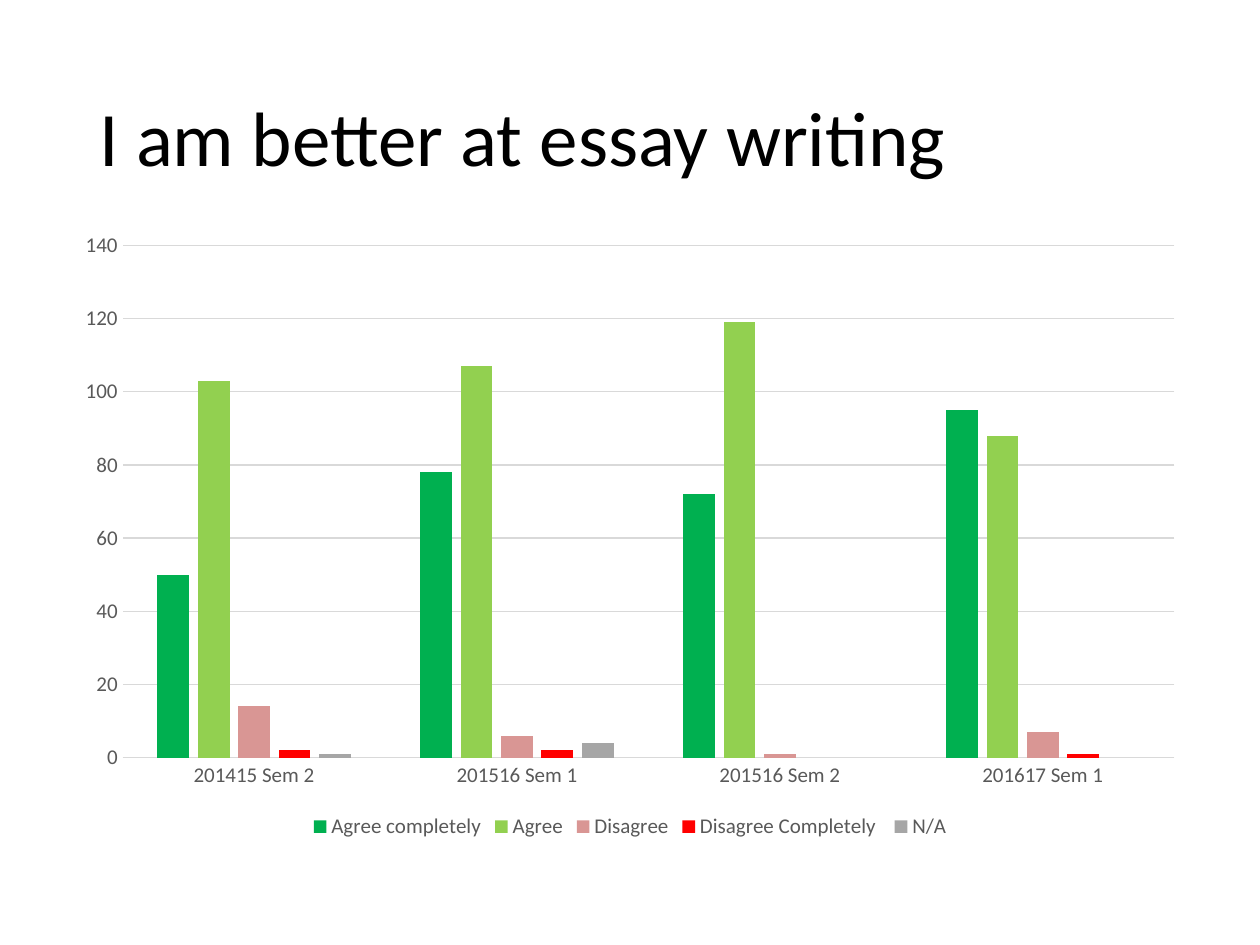
"""Build a slide with a clustered column chart of essay writing survey answers."""
from pptx import Presentation
from pptx.chart.data import CategoryChartData
from pptx.dml.color import RGBColor
from pptx.enum.chart import XL_CHART_TYPE, XL_LEGEND_POSITION, XL_TICK_MARK
from pptx.enum.text import MSO_ANCHOR
from pptx.util import Inches, Pt

FONT = "Calibri"
LABEL_GREY = "595959"
LINE_GREY = "D9D9D9"


def rgb(value):
    return RGBColor.from_string(value)


def add_text(slide, text, left, top, width, height, size, color):
    frame = slide.shapes.add_textbox(
        Inches(left), Inches(top), Inches(width), Inches(height)).text_frame
    frame.word_wrap = True
    frame.vertical_anchor = MSO_ANCHOR.MIDDLE
    paragraph = frame.paragraphs[0]
    paragraph.line_spacing = 0.9
    run = paragraph.add_run()
    run.text = text
    run.font.name = FONT
    run.font.size = Pt(size)
    run.font.color.rgb = rgb(color)


presentation = Presentation()
presentation.slide_width = Inches(10)
presentation.slide_height = Inches(7.5)
slide = presentation.slides.add_slide(presentation.slide_layouts[6])

add_text(slide, "I am better at essay writing", left=0.69, top=0.4,
         width=8.62, height=1.45, size=44, color="000000")

semesters = ["201415 Sem 2", "201516 Sem 1", "201516 Sem 2", "201617 Sem 1"]
answers = [
    ("Agree completely", [50, 78, 72, 95], "00B050"),
    ("Agree", [103, 107, 119, 88], "92D050"),
    ("Disagree", [14, 6, 1, 7], "D99694"),
    ("Disagree Completely ", [2, 2, None, 1], "FF0000"),
    ("N/A", [1, 4, None, None], "A6A6A6"),
]
survey = CategoryChartData()
survey.categories = semesters
for answer, counts, color in answers:
    survey.add_series(answer, counts)

chart = slide.shapes.add_chart(
    XL_CHART_TYPE.COLUMN_CLUSTERED, Inches(0.5), Inches(1.75),
    Inches(9), Inches(4.95), survey).chart
chart.has_title = False
chart.font.name = FONT
chart.font.size = Pt(10)
chart.font.color.rgb = rgb("000000")

columns = chart.plots[0]
columns.gap_width = 219
columns.overlap = -27
columns.vary_by_categories = False
for series, (answer, counts, color) in zip(columns.series, answers):
    series.invert_if_negative = False
    series.format.fill.solid()
    series.format.fill.fore_color.rgb = rgb(color)

chart.has_legend = True
chart.legend.position = XL_LEGEND_POSITION.BOTTOM
chart.legend.include_in_layout = False

semester_axis, count_axis = chart.category_axis, chart.value_axis
for axis in (semester_axis, count_axis):
    axis.major_tick_mark = XL_TICK_MARK.NONE
    axis.minor_tick_mark = XL_TICK_MARK.NONE
for font in (semester_axis.tick_labels.font, count_axis.tick_labels.font,
             chart.legend.font):
    font.name = FONT
    font.size = Pt(12)
    font.color.rgb = rgb(LABEL_GREY)

count_axis.has_major_gridlines = True
count_axis.format.line.fill.background()
for line in (semester_axis.format.line, count_axis.major_gridlines.format.line):
    line.width = Pt(0.75)
    line.color.rgb = rgb(LINE_GREY)

presentation.save("out.pptx")
